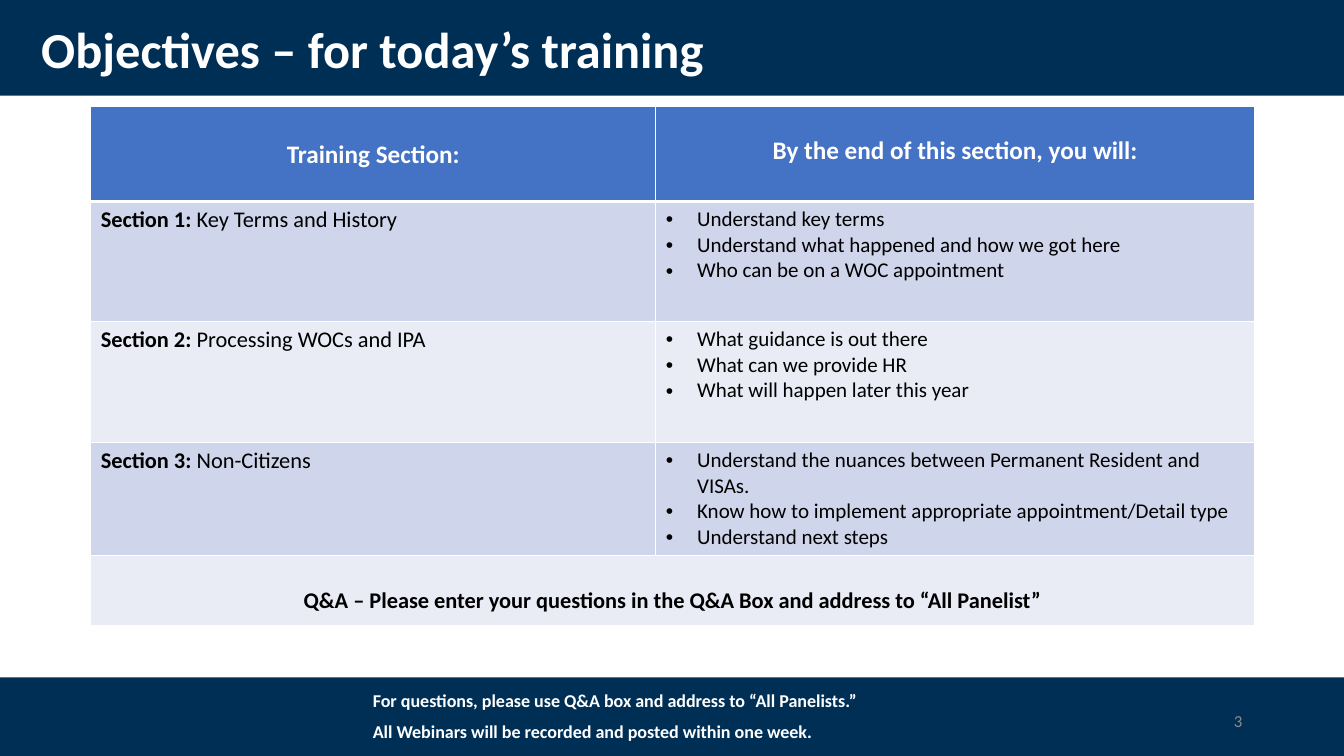
from lxml import etree
from pptx import Presentation
from pptx.dml.color import RGBColor
from pptx.enum.shapes import MSO_SHAPE
from pptx.enum.text import MSO_ANCHOR, PP_ALIGN
from pptx.oxml.ns import qn
from pptx.util import Inches, Pt

RECTANGLE = MSO_SHAPE.RECTANGLE
TOP, MIDDLE = MSO_ANCHOR.TOP, MSO_ANCHOR.MIDDLE
LEFT, CENTER, RIGHT = PP_ALIGN.LEFT, PP_ALIGN.CENTER, PP_ALIGN.RIGHT

WIDTH, HEIGHT = Inches(13.33), Inches(7.5)
FONT = "Calibri"
NAVY, BLUE, WHITE, BLACK, GREY = "002F56", "4472C4", "FFFFFF", "000000", "8C8C8C"
BANDS = ("CFD5EA", "E9EBF5")

# Table columns and rows, in percent of the slide's width and height
COLUMNS = (42.05, 44.55)
ROWS = (12.53, 15.87, 16, 14.93, 9.33)

HEADERS = (("Training Section:", 0.32), ("By the end of this section, you will:", 0.28))
SECTIONS = (
    ("Section 1: ", "Key Terms and History",
     ("Understand key terms",
      "Understand what happened and how we got here",
      "Who can be on a WOC appointment")),
    ("Section 2: ", "Processing WOCs and IPA",
     ("What guidance is out there",
      "What can we provide HR",
      "What will happen later this year")),
    ("Section 3: ", "Non-Citizens",
     ("Understand the nuances between Permanent Resident and VISAs.",
      "Know how to implement appropriate appointment/Detail type",
      "Understand next steps")),
)
QUESTIONS = "Q&A – Please enter your questions in the Q&A Box and address to “All Panelist”"
FOOTER = ("For questions, please use Q&A box and address to “All Panelists.”",
          "All Webinars will be recorded and posted within one week.")


def color(value):
    return RGBColor.from_string(value)


def across(percent):
    return round(WIDTH * percent / 100)


def down(percent):
    return round(HEIGHT * percent / 100)


def place(left, top, width, height):
    return across(left), down(top), across(width), down(height)


def set_font(font, size, fill, bold=None):
    font.name, font.size, font.bold = FONT, Pt(size), bold
    font.color.rgb = color(fill)


def add_bar(slide, top, height):
    bar = slide.shapes.add_shape(RECTANGLE, *place(0, top, 100, height))
    bar.shadow.inherit = False
    bar.fill.solid()
    bar.fill.fore_color.rgb = color(NAVY)
    bar.line.fill.background()


def write_lines(frame, lines, size, fill, bold=False, align=LEFT, spacing=None, gap=0):
    for index, line in enumerate(lines):
        paragraph = frame.add_paragraph() if index else frame.paragraphs[0]
        paragraph.text = line
        paragraph.alignment = align
        if spacing:
            paragraph.line_spacing = spacing
        if index and gap:
            paragraph.space_before = Pt(gap)
        set_font(paragraph.font, size, fill, bold)


def add_text(slide, box, lines, size, fill, anchor=TOP, **style):
    frame = slide.shapes.add_textbox(*place(*box)).text_frame
    frame.word_wrap = True
    frame.vertical_anchor = anchor
    write_lines(frame, lines, size, fill, **style)


def add_bullets(frame, items):
    for index, item in enumerate(items):
        paragraph = frame.add_paragraph() if index else frame.paragraphs[0]
        paragraph.text = item
        properties = paragraph._p.get_or_add_pPr()
        indent = Inches(0.31)
        properties.set("marL", str(indent))
        properties.set("indent", str(-indent))
        etree.SubElement(properties, qn("a:buFont")).set("typeface", "Arial")
        etree.SubElement(properties, qn("a:buChar")).set("char", "•")
        set_font(paragraph.font, 15, BLACK)


def style_cell(cell, fill, top_width=1, bottom_width=1):
    cell.fill.solid()
    cell.fill.fore_color.rgb = color(fill)
    properties = cell._tc.get_or_add_tcPr()
    sides = (("a:lnL", 1), ("a:lnR", 1), ("a:lnT", top_width), ("a:lnB", bottom_width))
    for index, (side, width) in enumerate(sides):
        line = etree.Element(qn(side))
        line.set("w", str(Pt(width)))
        solid = etree.SubElement(line, qn("a:solidFill"))
        etree.SubElement(solid, qn("a:srgbClr")).set("val", WHITE)
        properties.insert(index, line)


def add_objectives(slide):
    box = place(6.75, 14.13, sum(COLUMNS), sum(ROWS))
    table = slide.shapes.add_table(len(ROWS), len(COLUMNS), *box).table
    for column, share in zip(table.columns, COLUMNS):
        column.width = across(share)
    for row, share in zip(table.rows, ROWS):
        row.height = down(share)

    # Header fill, then alternating bands
    for index, row in enumerate(table.rows):
        for cell in row.cells:
            if index == 0:
                style_cell(cell, BLUE, bottom_width=3)
            else:
                style_cell(cell, BANDS[(index - 1) % 2], top_width=3 if index == 1 else 1)

    for index, (text, margin) in enumerate(HEADERS):
        cell = table.cell(0, index)
        cell.margin_top = Inches(margin)
        write_lines(cell.text_frame, [text], 18, WHITE, bold=True, align=CENTER)

    for index, (label, name, goals) in enumerate(SECTIONS, start=1):
        paragraph = table.cell(index, 0).text_frame.paragraphs[0]
        for text, bold in ((label, True), (name, False)):
            run = paragraph.add_run()
            run.text = text
            set_font(run.font, 16, BLACK, bold)
        add_bullets(table.cell(index, 1).text_frame, goals)

    # Closing row across both columns
    closing = table.cell(len(ROWS) - 1, 0)
    closing.merge(table.cell(len(ROWS) - 1, 1))
    closing.margin_top = Inches(0.32)
    write_lines(closing.text_frame, [QUESTIONS], 16, BLACK, bold=True, align=CENTER)


def main():
    presentation = Presentation()
    presentation.slide_width, presentation.slide_height = WIDTH, HEIGHT
    slide = presentation.slides.add_slide(presentation.slide_layouts[6])

    # Title and footer bars
    add_bar(slide, 0, 12.67)
    add_bar(slide, 89.6, 10.4)
    add_text(slide, (2.33, 2.4, 86.27, 9.07), ["Objectives – for today’s training"],
             36, WHITE, anchor=MIDDLE, bold=True, spacing=0.9)

    add_objectives(slide)

    # Slide number and footer note
    add_text(slide, (70.67, 92.67, 22.5, 5.33), ["3"], 12, GREY, anchor=MIDDLE, align=RIGHT)
    add_text(slide, (27, 91.07, 39.46, 8.13), FOOTER, 12.9, WHITE,
             bold=True, spacing=0.8, gap=10)

    presentation.save("out.pptx")


if __name__ == "__main__":
    main()
